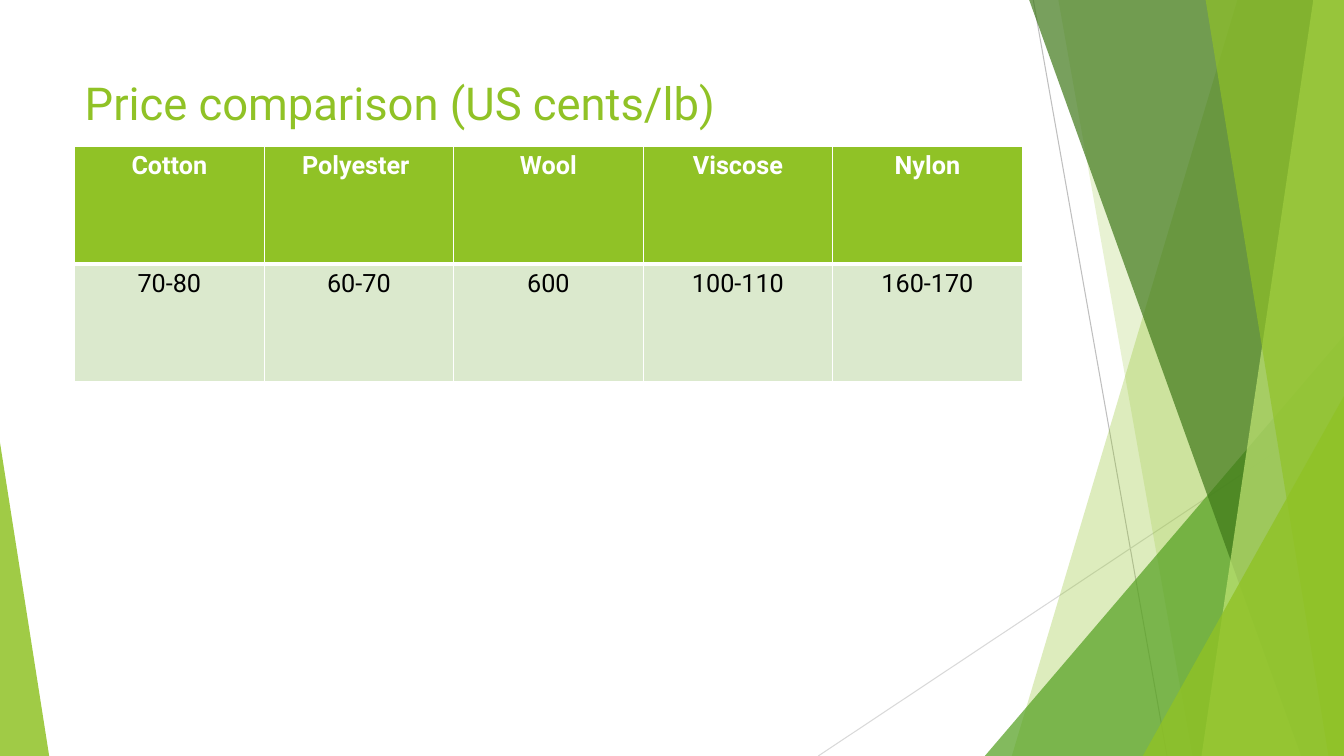
import pptx
import pptx.dml.color
import pptx.enum.shapes
import pptx.enum.text
import pptx.oxml
import pptx.oxml.ns
import pptx.util
import lxml.etree

Cm = pptx.util.Cm
Pt = pptx.util.Pt
WIDE, HIGH = 33.87, 19.05


def tint(code):
    return pptx.dml.color.RGBColor.from_string(code)


def sub(node, tag, **attrs):
    return lxml.etree.SubElement(node, pptx.oxml.ns.qn(tag), attrs)


class Page:
    """Hold the style and the current slide, and draw each kind of element."""

    font = "Roboto"
    lime = "90C226"
    white = "FFFFFF"

    def __init__(self, deck):
        self.slide = deck.slides.add_slide(deck.slide_layouts[5])
        self.shapes = self.slide.shapes

    def label(self, para, text, size, color, bold=False):
        run = para.add_run()
        run.text = text
        run.font.name = self.font
        run.font.size = Pt(size)
        run.font.bold = bold
        run.font.color.rgb = tint(color)

    def title(self, text, left, top, width, height):
        box = self.shapes.title
        box.left, box.top, box.width, box.height = map(Cm, (left, top, width, height))
        frame = box.text_frame
        frame.word_wrap = True
        frame.auto_size = pptx.enum.text.MSO_AUTO_SIZE.NONE
        frame.vertical_anchor = pptx.enum.text.MSO_ANCHOR.TOP
        frame.margin_top = Cm(0.2)
        para = frame.paragraphs[0]
        para.alignment = pptx.enum.text.PP_ALIGN.LEFT
        self.label(para, text, 32.4, self.lime)

    def line(self, x1, y1, x2, y2, color):
        kind = pptx.enum.shapes.MSO_CONNECTOR.STRAIGHT
        line = self.shapes.add_connector(kind, Cm(x1), Cm(y1), Cm(x2), Cm(y2))
        line.line.color.rgb = tint(color)
        line.line.width = Pt(0.75)
        sub(line._element.spPr, "a:effectLst")

    def paint(self, shape, color, alpha):
        shape.shadow.inherit = False
        shape.line.fill.background()
        shape.fill.solid()
        shape.fill.fore_color.rgb = tint(color)
        for clr in shape._element.spPr.iter(pptx.oxml.ns.qn("a:srgbClr")):
            sub(clr, "a:alpha", val=str(alpha * 1000))

    def band(self, top_x, base_x, color, alpha):
        form = self.shapes.build_freeform(Cm(top_x), Cm(-0.02))
        corners = [(WIDE, -0.02), (WIDE, HIGH), (base_x, HIGH)]
        form.add_line_segments([(Cm(x), Cm(y)) for x, y in corners])
        self.paint(form.convert_to_shape(), color, alpha)

    def wedge(self, left, width, height, peak, color, alpha):
        kind = pptx.enum.shapes.MSO_SHAPE.ISOSCELES_TRIANGLE
        shape = self.shapes.add_shape(
            kind, Cm(left), Cm(HIGH - height), Cm(width), Cm(height))
        shape.adjustments[0] = peak
        self.paint(shape, color, alpha)

    def edge(self, cell, side, width):
        props = cell._tc.get_or_add_tcPr()
        line = sub(props, "a:ln" + side, w=str(Pt(width)))
        sub(sub(line, "a:solidFill"), "a:srgbClr", val=self.white)

    def table(self, rows, looks, left, top, width, height):
        grid = self.shapes.add_table(
            len(rows), len(rows[0]), Cm(left), Cm(top), Cm(width), Cm(height)).table
        for r, (row, look) in enumerate(zip(rows, looks)):
            fill, color, bold, edges = look
            for c, text in enumerate(row):
                cell = grid.cell(r, c)
                for side, thick in zip("LRTB", edges):
                    self.edge(cell, side, thick)
                cell.fill.solid()
                cell.fill.fore_color.rgb = tint(fill)
                para = cell.text_frame.paragraphs[0]
                para.alignment = pptx.enum.text.PP_ALIGN.CENTER
                self.label(para, text, 18, color, bold)


def main():
    deck = pptx.Presentation()
    deck.slide_width, deck.slide_height = Cm(WIDE), Cm(HIGH)
    page = Page(deck)
    lime, white = page.lime, page.white

    page.line(26.04, 0, 29.41, HIGH, "BFBFBF")
    page.line(WIDE, 10.24, 20.62, HIGH, "D9D9D9")
    page.band(31.19, 25.5, lime, 30)
    page.band(26.67, 30.05, lime, 20)
    page.wedge(24.82, 9.05, 10.59, 1, "54A021", 72)
    page.band(25.93, 32.79, "3F7819", 70)
    page.band(33.1, 30.28, "C0E474", 70)
    page.band(30.38, 33.48, lime, 65)
    page.wedge(28.8, 5.07, 9.07, 1, lime, 80)
    page.wedge(0, 1.24, 7.9, 0, lime, 85)

    page.title("Price comparison (US cents/lb)", 1.88, 1.7, 23.88, 1.52)
    rows = [
        ["Cotton", "Polyester ", "Wool", "Viscose", "Nylon"],
        ["70-80", "60-70", "600", "100-110", "160-170"],
    ]
    looks = [
        (lime, white, True, (1, 1, 1, 3)),
        ("DBE9CD", "000000", False, (1, 1, 3, 1)),
    ]
    page.table(rows, looks, 1.88, 3.68, 23.88, 5.94)
    deck.save("out.pptx")


if __name__ == "__main__":
    main()
